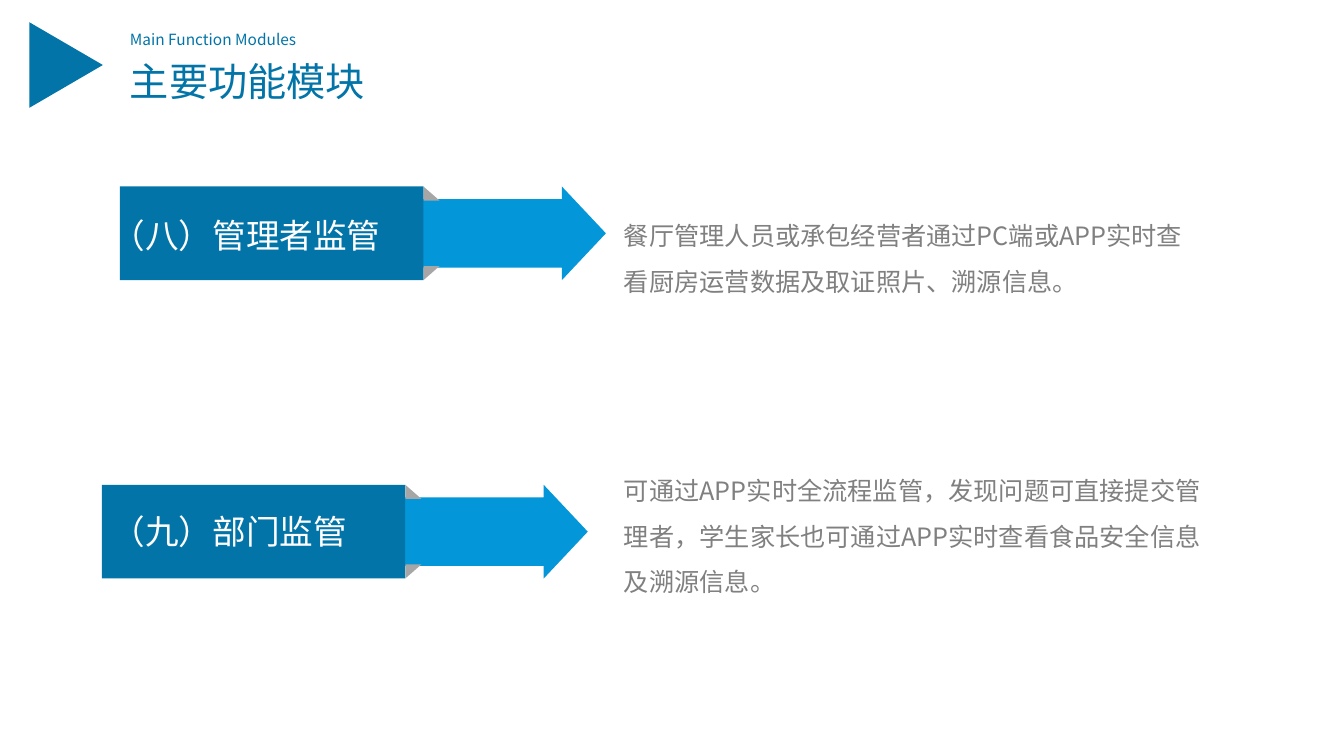
from lxml import etree
from pptx import Presentation
from pptx.dml.color import RGBColor
from pptx.enum.shapes import MSO_SHAPE
from pptx.enum.text import MSO_AUTO_SIZE
from pptx.oxml.ns import qn
from pptx.util import Pt

PX = 9144
FONT = "Noto Sans CJK SC"
DEEP_BLUE = RGBColor(0x02, 0x74, 0xA8)
BRIGHT_BLUE = RGBColor(0x03, 0x96, 0xD9)
FOLD_GRAY = RGBColor(0xA6, 0xA6, 0xA6)
TEXT_GRAY = RGBColor(0x80, 0x80, 0x80)
WHITE = RGBColor(0xFF, 0xFF, 0xFF)
TRIANGLE = MSO_SHAPE.ISOSCELES_TRIANGLE
FOLD = MSO_SHAPE.RIGHT_TRIANGLE
ARROW = MSO_SHAPE.RIGHT_ARROW
RECTANGLE = MSO_SHAPE.RECTANGLE
GROW = MSO_AUTO_SIZE.SHAPE_TO_FIT_TEXT

deck = Presentation()
deck.slide_width = 1333 * PX
deck.slide_height = 750 * PX
page = deck.slides.add_slide(deck.slide_layouts[6])


def add_figure(kind, left, top, width, height, color):
    figure = page.shapes.add_shape(kind, left * PX, top * PX, width * PX, height * PX)
    figure.shadow.inherit = False
    figure.fill.solid()
    figure.fill.fore_color.rgb = color
    figure.line.fill.background()
    return figure


def add_text(text, left, top, width, height, size, color, spacing=None, wrap=True):
    box = page.shapes.add_textbox(left * PX, top * PX, width * PX, height * PX)
    frame = box.text_frame
    frame.word_wrap = wrap
    frame.auto_size = GROW
    frame.text = text
    para = frame.paragraphs[0]
    para.line_spacing = spacing
    span = para.runs[0]
    span.font.size = Pt(size)
    span.font.name = FONT
    span.font.color.rgb = color
    east_asian = etree.SubElement(span.font._element, qn("a:ea"))
    east_asian.set("typeface", FONT)


pointer = add_figure(TRIANGLE, 23, 28, 85, 73, DEEP_BLUE)
pointer.rotation = 90
add_text("Main Function Modules", 119, 25, 306, 28, 11, DEEP_BLUE)
add_text("主要功能模块", 119, 52, 253, 57, 28, DEEP_BLUE, wrap=False)

modules = [
    ("（八）管理者监管", 119, 185, 208, 199, 101,
     "餐厅管理人员或承包经营者通过PC端或APP实时查看厨房运营数据及取证照片、溯源信息。"),
    ("（九）部门监管", 101, 481, 502, 452, 192,
     "可通过APP实时全流程监管，发现问题可直接提交管理者，学生家长也可通过APP实时查看食品安全信息及溯源信息。"),
]
for name, left, top, name_top, detail_top, detail_height, detail in modules:
    arrow = add_figure(ARROW, left + 182, top, 300, 93, BRIGHT_BLUE)
    arrow.adjustments[0] = 0.73
    arrow.adjustments[1] = 0.47
    lower_fold = add_figure(FOLD, left + 301, top + 79, 16, 14, FOLD_GRAY)
    lower_fold.element.spPr.xfrm.set("flipV", "1")
    add_figure(FOLD, left + 301, top, 16, 14, FOLD_GRAY)
    add_figure(RECTANGLE, left, top, 301, 93, DEEP_BLUE)
    add_text(name, 101, name_top, 318, 50, 24, WHITE)
    add_text(detail, 609, detail_top, 592, detail_height, 18, TEXT_GRAY, spacing=1.5)

deck.save("out.pptx")
